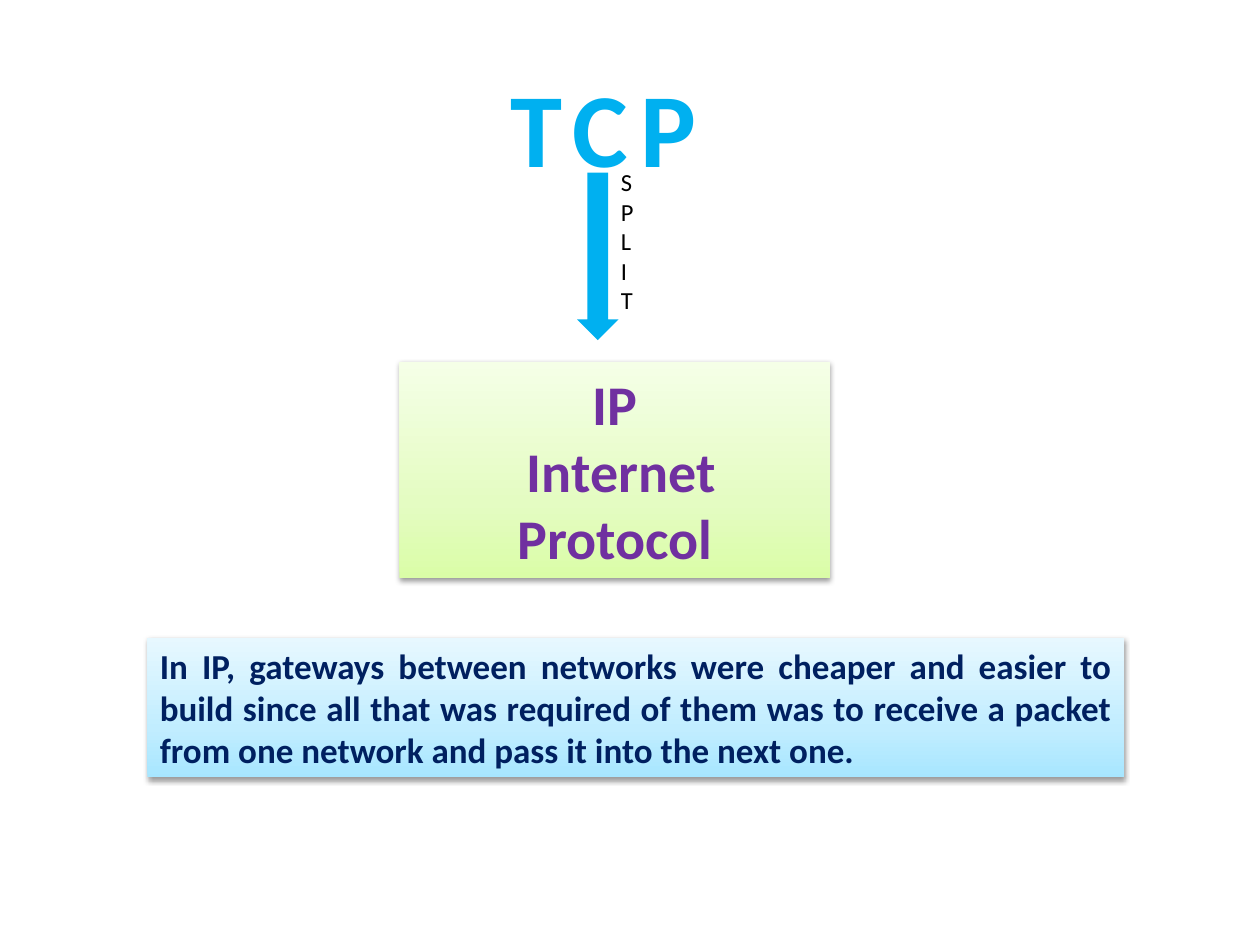
from copy import deepcopy

from lxml.etree import SubElement
from pptx import Presentation
from pptx.dml.color import RGBColor
from pptx.enum.shapes import MSO_SHAPE as Preset
from pptx.enum.text import MSO_AUTO_SIZE as AutoSize, PP_ALIGN as Align
from pptx.oxml.ns import qn
from pptx.util import Inches, Pt

SKY = RGBColor(0x00, 0xB0, 0xF0)
BLACK = RGBColor(0x00, 0x00, 0x00)
PURPLE = RGBColor(0x70, 0x30, 0xA0)
NAVY = RGBColor(0x00, 0x20, 0x60)
GREENS = (
    RGBColor(0xDA, 0xFD, 0xA7),
    RGBColor(0xE4, 0xFC, 0xC2),
    RGBColor(0xF5, 0xFF, 0xE7),
)
BLUES = (
    RGBColor(0xA7, 0xE6, 0xFF),
    RGBColor(0xC1, 0xED, 0xFF),
    RGBColor(0xE7, 0xF8, 0xFF),
)


class SlideBuilder:
    font_name = "Calibri"
    gradient_positions = (0, 0.35, 1)

    def __init__(self, presentation):
        self.slide = presentation.slides.add_slide(presentation.slide_layouts[6])

    def set_text(self, shape, lines, color, size, bold=True, align=Align.CENTER):
        frame = shape.text_frame
        frame.word_wrap = True
        frame.auto_size = AutoSize.SHAPE_TO_FIT_TEXT
        frame.text = "\n".join(lines)
        font_format = {"name": self.font_name, "size": Pt(size), "bold": bold}
        for paragraph in frame.paragraphs:
            paragraph.alignment = align
            for run in paragraph.runs:
                for attribute, value in font_format.items():
                    setattr(run.font, attribute, value)
                run.font.color.rgb = color

    def text(self, box, lines, color, size, spacing=0, direction="horz", **style):
        shape = self.slide.shapes.add_textbox(*map(Inches, box))
        self.set_text(shape, lines, color, size, **style)
        shape._element.txBody.find(qn("a:bodyPr")).set("vert", direction)
        if spacing:
            for properties in shape._element.iter(qn("a:rPr")):
                properties.set("spc", str(spacing * 100))

    def shape(self, preset, box):
        shape = self.slide.shapes.add_shape(preset, *map(Inches, box))
        shape.shadow.inherit = False
        shape.line.fill.background()
        return shape

    def arrow(self, box, color):
        shape = self.shape(Preset.DOWN_ARROW, box)
        shape.fill.solid()
        shape.fill.fore_color.rgb = color

    def panel(self, box, gradient, lines, color, size, **style):
        shape = self.shape(Preset.RECTANGLE, box)
        self.fill_gradient(shape, gradient)
        self.add_shadow(shape)
        self.set_text(shape, lines, color, size, **style)

    def fill_gradient(self, shape, colors):
        shape.fill.gradient()
        shape.fill.gradient_angle = 90
        stop_list = shape._element.spPr.find(qn("a:gradFill")).find(qn("a:gsLst"))
        stop_list.append(deepcopy(stop_list[-1]))
        stops = shape.fill.gradient_stops
        for stop, position, color in zip(stops, self.gradient_positions, colors):
            stop.position = position
            stop.color.rgb = color

    def add_shadow(self, shape):
        effects = shape._element.spPr.find(qn("a:effectLst"))
        shadow = SubElement(effects, qn("a:outerShdw"))
        shadow_format = {
            "blurRad": Pt(3.1),
            "dist": Pt(1.6),
            "dir": 90 * 60000,
            "rotWithShape": 0,
        }
        for attribute, value in shadow_format.items():
            shadow.set(attribute, str(int(value)))
        color = SubElement(shadow, qn("a:srgbClr"), val=str(BLACK))
        SubElement(color, qn("a:alpha"), val="38000")


def main():
    presentation = Presentation()
    presentation.slide_width = Inches(10)
    presentation.slide_height = Inches(7.5)

    builder = SlideBuilder(presentation)
    builder.text((3.33, 0.45, 2.92, 1.11), ["TCP"], SKY, 60, spacing=7)
    builder.arrow((4.58, 1.37, 0.33, 1.33), SKY)
    builder.text(
        (4.83, 1.28, 0.48, 1.92), ["SPLIT"], BLACK, 14,
        direction="wordArtVert", bold=False, align=Align.LEFT,
    )
    builder.panel(
        (3.17, 2.87, 3.42, 1.72), GREENS, ["IP", " Internet Protocol"], PURPLE, 32
    )
    explanation = (
        "In IP, gateways between networks were cheaper and easier to build "
        "since all that was required of them was to receive a packet from "
        "one network and pass it into the next one."
    )
    builder.panel(
        (1.17, 5.06, 7.75, 1.11), BLUES, [explanation], NAVY, 20, align=Align.JUSTIFY
    )
    presentation.save("out.pptx")


if __name__ == "__main__":
    main()
